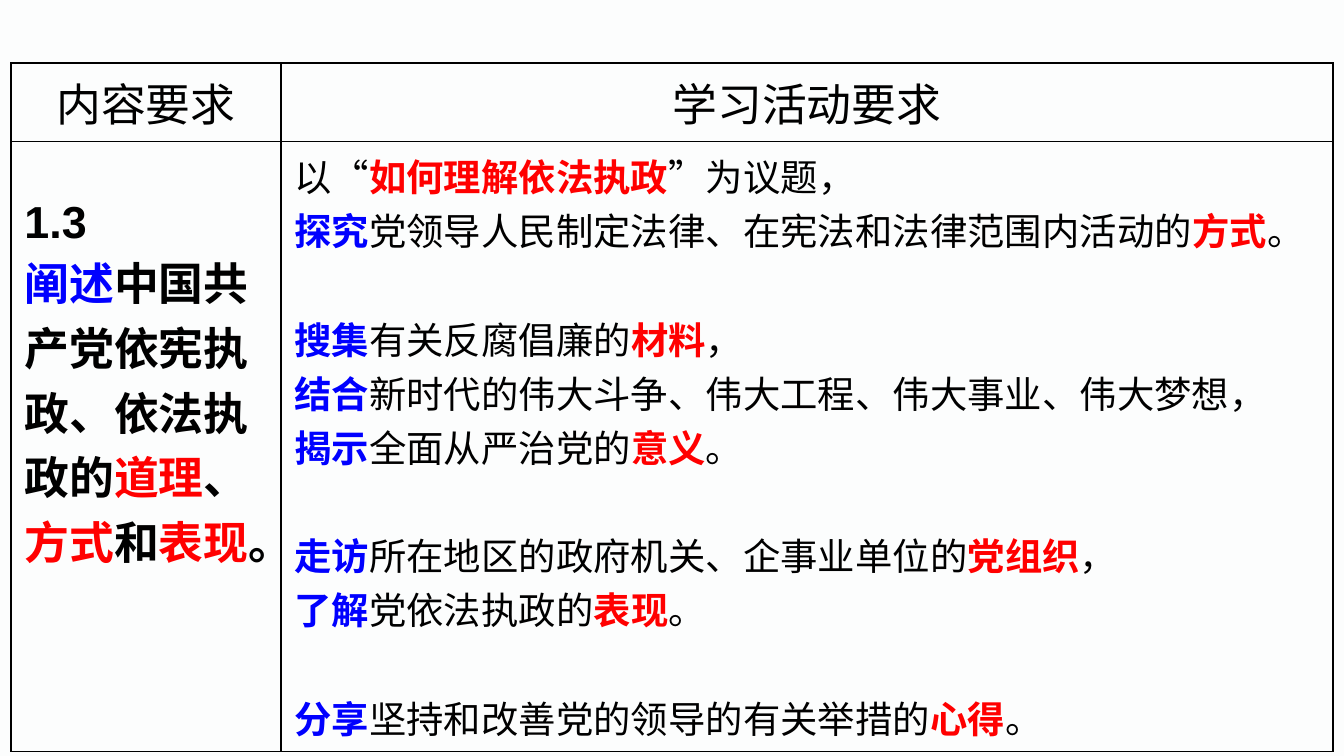
from dataclasses import dataclass

from lxml.etree import SubElement
from pptx import Presentation
from pptx.dml.color import RGBColor as RGB
from pptx.enum.text import PP_ALIGN as Align
from pptx.oxml.ns import qn
from pptx.util import Emu, Pt


@dataclass(frozen=True)
class Theme:
    background: RGB = RGB(0xFC, 0xFD, 0xFD)
    text: RGB = RGB(0, 0, 0)
    verb: RGB = RGB(0, 0, 0xFF)
    key: RGB = RGB(0xFF, 0, 0)
    latin: str = "Arial"
    chinese: str = "Noto Sans CJK SC"
    large: Pt = Pt(24)
    body: Pt = Pt(20)
    group_gap: Pt = Pt(29)
    border: Pt = Pt(1)


THEME = Theme()
PX = 914400 / 134.4


def px(count):
    return Emu(round(count * PX))


def write_phrases(paragraph, phrases, size, all_bold=False):
    """Write a verb, then plain text and key terms in turn."""
    paragraph.font.size = size
    paragraph.font.name = THEME.chinese
    for index, phrase in enumerate(phrases):
        if not phrase:
            continue
        plain = index % 2 == 1
        run = paragraph.add_run()
        run.text = phrase
        run.font.bold = all_bold or not plain
        run.font.color.rgb = THEME.text if plain else THEME.key if index else THEME.verb
        SubElement(run.font._element, qn("a:ea"), typeface=THEME.chinese)


HEADINGS = ["内容要求", "学习活动要求"]
REQUIREMENT = ["阐述", "中国共产党依宪执政、依法执政的", "道理", "、",
               "方式", "和", "表现", "。"]
ACTIVITY_GROUPS = [
    [["", "以“", "如何理解依法执政", "”为议题，"],
     ["探究", "党领导人民制定法律、在宪法和法律范围内活动的", "方式", "。"]],
    [["搜集", "有关反腐倡廉的", "材料", "，"],
     ["结合", "新时代的伟大斗争、伟大工程、伟大事业、伟大梦想，"],
     ["揭示", "全面从严治党的", "意义", "。"]],
    [["走访", "所在地区的政府机关、企事业单位的", "党组织", "，"],
     ["了解", "党依法执政的", "表现", "。"]],
    [["分享", "坚持和改善党的领导的有关举措的", "心得", "。"]],
]

prs = Presentation()
prs.slide_width, prs.slide_height = px(1344), px(756)
slide = prs.slides.add_slide(prs.slide_layouts[6])
slide.background.fill.solid()
slide.background.fill.fore_color.rgb = THEME.background

# Table grid
table = slide.shapes.add_table(2, 2, px(11), px(63), px(1322), px(688)).table
table.first_row = table.horz_banding = False
for column, width in zip(table.columns, (270, 1052)):
    column.width = px(width)
for row, height in zip(table.rows, (78, 610)):
    row.height = px(height)
for cell in table.iter_cells():
    properties = cell._tc.get_or_add_tcPr()
    for side in ("a:lnL", "a:lnR", "a:lnT", "a:lnB"):
        line = SubElement(properties, qn(side), w=str(THEME.border))
        fill = SubElement(line, qn("a:solidFill"))
        SubElement(fill, qn("a:srgbClr"), val=str(THEME.text))
    cell.fill.background()

# Headings
for column, heading in enumerate(HEADINGS):
    title = table.cell(0, column).text_frame.paragraphs[0]
    title.text = heading
    title.alignment = Align.CENTER
    title.font.size = THEME.large
    title.font.name = THEME.latin
    title.font.color.rgb = THEME.text

# Content requirement
requirement = table.cell(1, 0).text_frame
number = requirement.paragraphs[0]
number.text = "1.3"
number.line_spacing = 2.0
number.font.size = THEME.large
number.font.name = THEME.latin
number.font.bold = True
number.font.color.rgb = THEME.text
write_phrases(requirement.add_paragraph(), REQUIREMENT, THEME.large, all_bold=True)

# Learning activities, one blank line's height between groups
activities = table.cell(1, 1).text_frame
activity = activities.paragraphs[0]
for group_index, group in enumerate(ACTIVITY_GROUPS):
    for line_index, phrases in enumerate(group):
        if group_index or line_index:
            activity = activities.add_paragraph()
        if group_index and not line_index:
            activity.space_before = THEME.group_gap
        write_phrases(activity, phrases, THEME.body)

prs.save("out.pptx")
